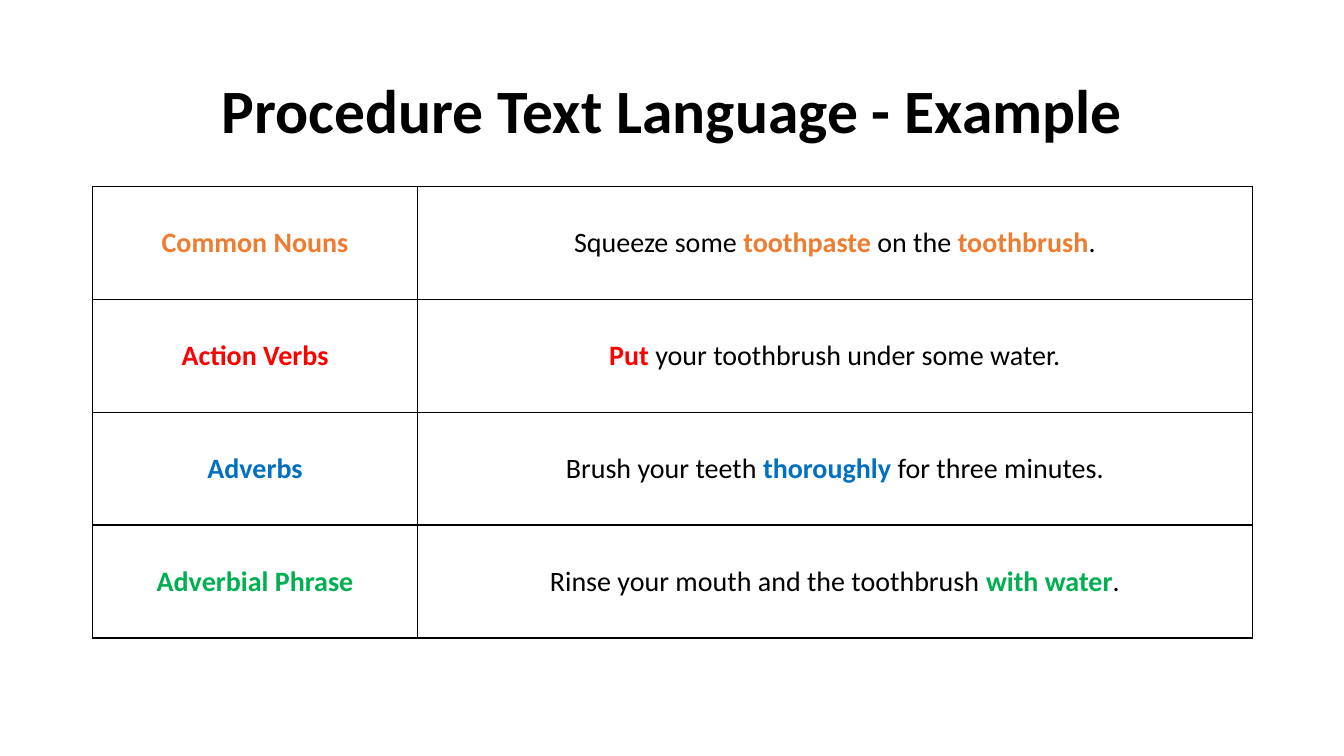
"""Build a slide with a table of procedure text language examples."""
from lxml.etree import SubElement
from pptx import Presentation
from pptx.dml.color import RGBColor
from pptx.enum.text import MSO_ANCHOR, PP_ALIGN
from pptx.oxml.ns import qn
from pptx.util import Inches, Pt

BLACK = "000000"
COLUMN_WIDTHS = (3.22, 8.28)
ROW_HEIGHT = 1.12
EXAMPLES = [
    ("Common Nouns", "ED7D31",
     ["Squeeze some ", "toothpaste", " on the ", "toothbrush", "."]),
    ("Action Verbs", "FF0000",
     ["", "Put", " your toothbrush under some water."]),
    ("Adverbs", "0070C0",
     ["Brush your teeth ", "thoroughly", " for three minutes."]),
    ("Adverbial Phrase", "00B050",
     ["Rinse your mouth and the toothbrush ", "with water", "."]),
]


def color(hex_value):
    return RGBColor.from_string(hex_value)


def add_span(para, text, size, bold, hex_value):
    span = para.add_run()
    span.text = text
    formats = {"name": "Calibri", "size": Pt(size), "bold": bold}
    for name, value in formats.items():
        setattr(span.font, name, value)
    span.font.color.rgb = color(hex_value)


deck = Presentation()
deck.slide_width, deck.slide_height = Inches(13.33), Inches(7.5)
page = deck.slides.add_slide(deck.slide_layouts[5])

title = page.shapes.title
title_place = {"left": 0.92, "top": 0.4, "width": 11.5, "height": 1.45}
for name, value in title_place.items():
    setattr(title, name, Inches(value))
title.text_frame.vertical_anchor = MSO_ANCHOR.MIDDLE
title_para = title.text_frame.paragraphs[0]
title_para.alignment = PP_ALIGN.CENTER
title_para.line_spacing = 0.9
add_span(title_para, "Procedure Text Language - Example", 44, True, BLACK)

table = page.shapes.add_table(
    len(EXAMPLES), len(COLUMN_WIDTHS), Inches(0.92), Inches(1.85),
    Inches(sum(COLUMN_WIDTHS)), Inches(ROW_HEIGHT * len(EXAMPLES))).table
table.first_row = False
table.horz_banding = False
for column, width in zip(table.columns, COLUMN_WIDTHS):
    column.width = Inches(width)

for row, (term, accent, sentence) in zip(table.rows, EXAMPLES):
    row.height = Inches(ROW_HEIGHT)
    for cell, pieces in zip(row.cells, (["", term], sentence)):
        cell.vertical_anchor = MSO_ANCHOR.MIDDLE
        properties = cell._tc.get_or_add_tcPr()
        for side in ("a:lnL", "a:lnR", "a:lnT", "a:lnB"):
            border = SubElement(properties, qn(side), w=str(Pt(1)))
            border_fill = SubElement(border, qn("a:solidFill"))
            SubElement(border_fill, qn("a:srgbClr"), val=BLACK)
        cell.fill.solid()
        cell.fill.fore_color.rgb = color("FFFFFF")
        para = cell.text_frame.paragraphs[0]
        para.alignment = PP_ALIGN.CENTER
        for index, piece in enumerate(pieces):
            highlighted = index % 2 == 1
            if piece:
                add_span(para, piece, 20, highlighted,
                         accent if highlighted else BLACK)

deck.save("out.pptx")
